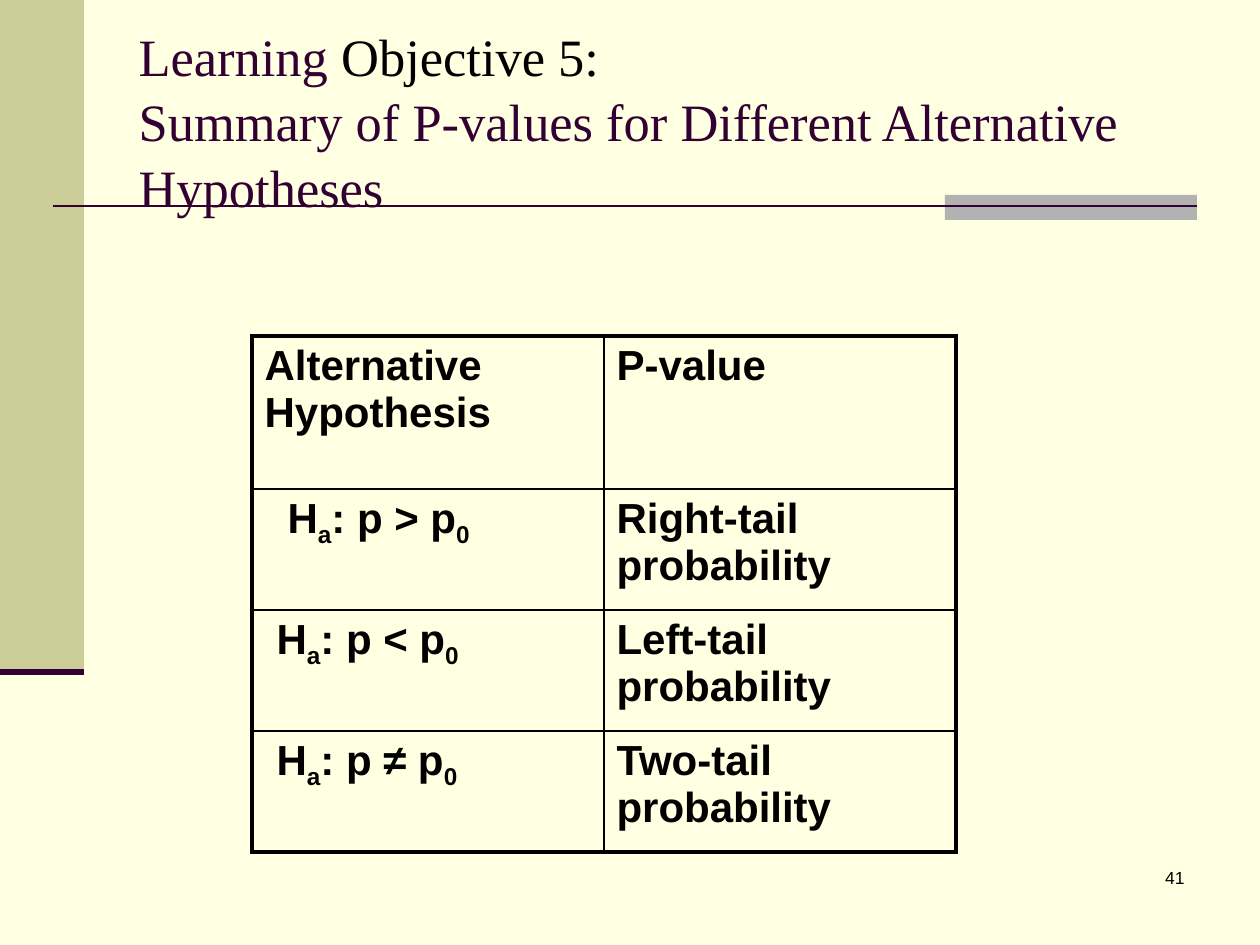
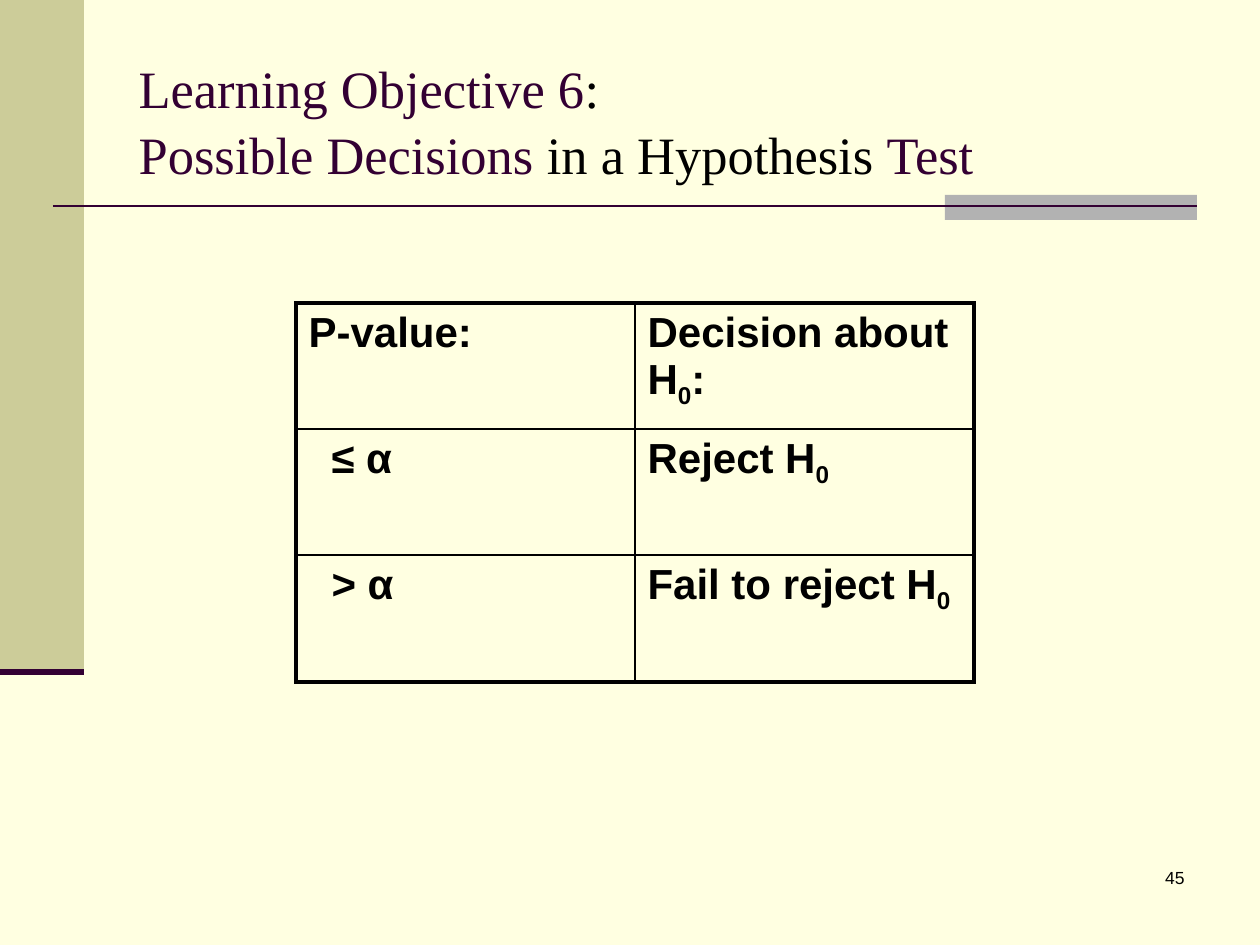
from lxml import etree
from pptx import Presentation
from pptx.dml.color import RGBColor
from pptx.enum.shapes import MSO_CONNECTOR, MSO_SHAPE
from pptx.enum.text import MSO_ANCHOR, MSO_AUTO_SIZE, PP_ALIGN
from pptx.oxml.ns import qn
from pptx.util import Emu, Pt

RECTANGLE = MSO_SHAPE.RECTANGLE
STRAIGHT = MSO_CONNECTOR.STRAIGHT
MIDDLE = MSO_ANCHOR.MIDDLE
NO_FIT = MSO_AUTO_SIZE.NONE
LEFT, RIGHT = PP_ALIGN.LEFT, PP_ALIGN.RIGHT

CREAM, KHAKI, GREY = "FFFFE1", "CCCC99", "B2B2B2"
PLUM, BLACK = "330033", "000000"
PX = 914400 / 126

color = RGBColor.from_string


def px(*lengths):
    return [Emu(round(length * PX)) for length in lengths]


def add_span(para, text, hex_color, **formats):
    span = para.add_run()
    span.text = text
    span.font.color.rgb = color(hex_color)
    for name, value in formats.items():
        setattr(span.font, name, value)
    return span


TITLE_FONT = {"name": "Times New Roman", "size": Pt(30)}
NUMBER_FONT = {"name": "Arial", "size": Pt(10)}
CELL_FONT = {"name": "Arial", "size": Pt(24), "bold": True}

BANDS = [((0, 0, 84, 672), KHAKI), ((945, 195, 252, 25), GREY)]
RULES = [((53, 206, 1197, 206), 1.5), ((0, 672, 84, 672), 3.5)]

PAGES = [
    {
        "number": "41",
        "title": [
            [("Learning ", PLUM), ("Objective 5:", BLACK)],
            [("Summary of P-values for Different Alternative Hypotheses", PLUM)],
        ],
        "corner": (252, 336),
        "column": 352,
        "heights": [153, 121, 121, 121],
        "indents": [0, 23, 12, 12],
        "rows": [
            ("Alternative Hypothesis", "P-value"),
            ("H_a: p > p_0", "Right-tail probability"),
            ("H_a: p < p_0", "Left-tail probability"),
            ("H_a: p ≠ p_0", "Two-tail probability"),
        ],
    },
    {
        "number": "45",
        "title": [
            [("Learning Objective 6", PLUM), (":", BLACK)],
            [("Possible Decisions ", PLUM), ("in a Hypothesis ", BLACK), ("Test", PLUM)],
        ],
        "corner": (296, 303),
        "column": 339,
        "heights": [126, 126, 127],
        "indents": [0, 23, 23],
        "rows": [
            ("P-value:", "Decision about H_0:"),
            ("≤ α", "Reject H_0"),
            ("> α", "Fail to reject H_0"),
        ],
    },
]

deck = Presentation()
deck.slide_width, deck.slide_height = px(1260, 945)
background = deck.slide_master.background.fill
background.solid()
background.fore_color.rgb = color(CREAM)

for content in PAGES:
    page = deck.slides.add_slide(deck.slide_layouts[5])

    for place, fill in BANDS:
        band = page.shapes.add_shape(RECTANGLE, *px(*place))
        band.shadow.inherit = False
        band.fill.solid()
        band.fill.fore_color.rgb = color(fill)
        band.line.fill.background()

    for ends, width in RULES:
        rule = page.shapes.add_connector(STRAIGHT, *px(*ends))
        rule.line.color.rgb = color(PLUM)
        rule.line.width = Pt(width)
        etree.SubElement(rule._element.spPr, qn("a:effectLst"))

    box = page.shapes.add_textbox(*px(935, 861, 262, 63))
    box.text_frame.word_wrap = True
    para = box.text_frame.paragraphs[0]
    para.alignment = RIGHT
    add_span(para, content["number"], BLACK, **NUMBER_FONT)

    title = page.shapes.title
    title.left, title.top, title.width, title.height = px(126, 38, 1071, 157)
    page.shapes._spTree.append(title._element)
    frame = title.text_frame
    frame.auto_size = NO_FIT
    frame.vertical_anchor = MIDDLE
    frame.margin_top, frame.margin_bottom = px(12, 6)
    para = frame.paragraphs[0]
    para.alignment = LEFT
    para.line_spacing = 1.04
    for index, line in enumerate(content["title"]):
        if index:
            para.add_line_break()
        for text, hex_color in line:
            add_span(para, text, hex_color, **TITLE_FONT)

    rows, heights = content["rows"], content["heights"]
    size = (2 * content["column"], sum(heights))
    table = page.shapes.add_table(
        len(rows), 2, *px(*content["corner"], *size)
    ).table
    table.first_row = table.horz_banding = False
    for column in table.columns:
        column.width = px(content["column"])[0]

    for row, texts in enumerate(rows):
        table.rows[row].height = px(heights[row])[0]
        for column, text in enumerate(texts):
            cell = table.cell(row, column)
            cell.fill.solid()
            cell.fill.fore_color.rgb = color(CREAM)
            para = cell.text_frame.paragraphs[0]
            if column == 0:
                cell.margin_left = px(12.6 + content["indents"][row])[0]

            plain, *parts = text.split("_")
            add_span(para, plain, BLACK, **CELL_FONT)
            for part in parts:
                subscript = add_span(para, part[0], BLACK, **CELL_FONT)
                subscript._r.get_or_add_rPr().set("baseline", "-25000")
                if part[1:]:
                    add_span(para, part[1:], BLACK, **CELL_FONT)

            outer_sides = {
                "lnL": column == 0,
                "lnR": column == 1,
                "lnT": row == 0,
                "lnB": row == len(rows) - 1,
            }
            properties = cell._tc.get_or_add_tcPr()
            for index, (side, outer) in enumerate(outer_sides.items()):
                border = etree.Element(qn("a:" + side), w=str(Pt(2.25 if outer else 1)))
                fill = etree.SubElement(border, qn("a:solidFill"))
                etree.SubElement(fill, qn("a:srgbClr"), val=BLACK)
                properties.insert(index, border)

deck.save("out.pptx")
